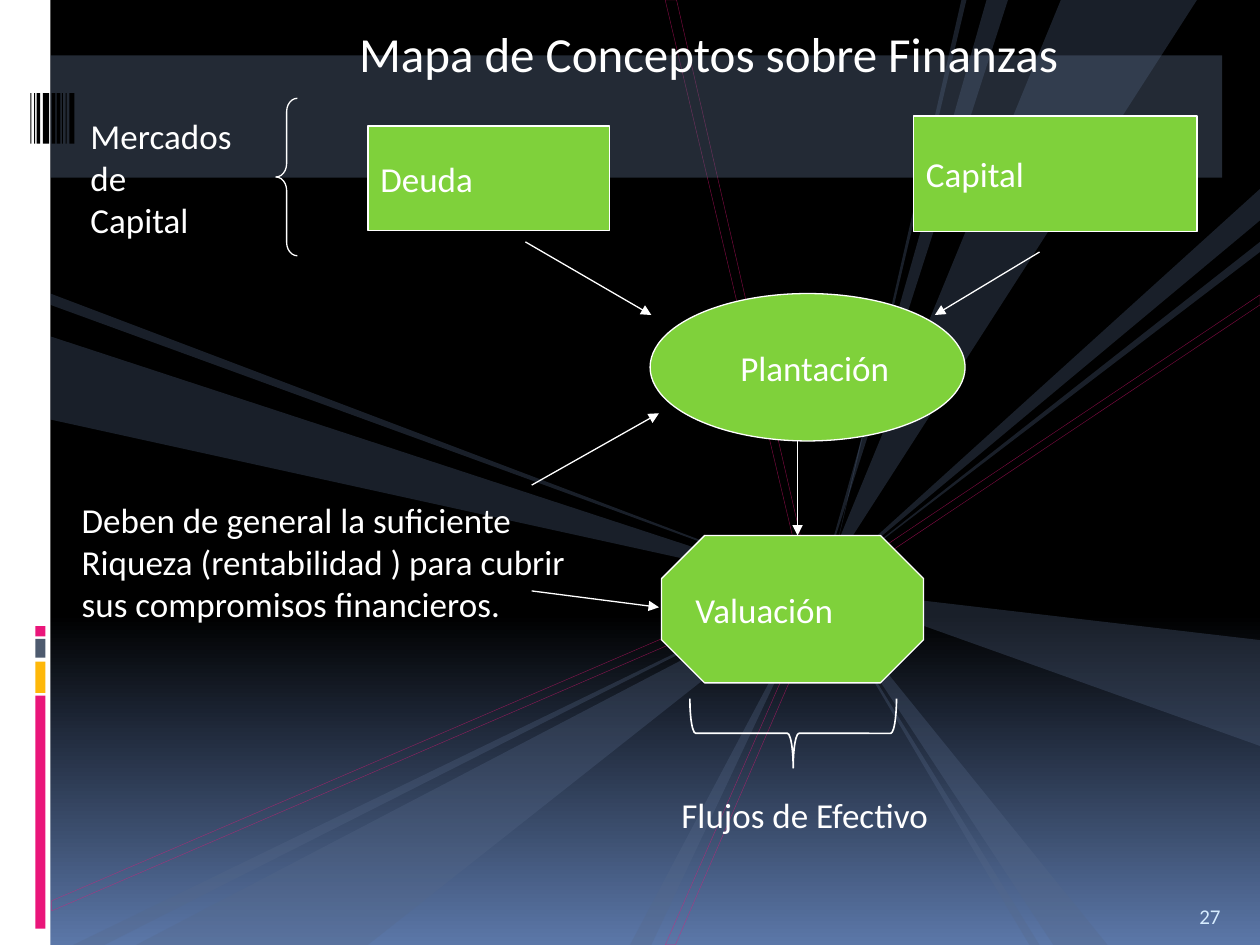
from lxml import etree
from pptx import Presentation
from pptx.dml.color import RGBColor
from pptx.enum.shapes import MSO_CONNECTOR, MSO_SHAPE
from pptx.enum.text import MSO_ANCHOR, PP_ALIGN
from pptx.oxml.ns import qn
from pptx.util import Inches, Pt

RECT, OVAL, OCTAGON = MSO_SHAPE.RECTANGLE, MSO_SHAPE.OVAL, MSO_SHAPE.OCTAGON
LEFT_BRACE, RIGHT_BRACE = MSO_SHAPE.LEFT_BRACE, MSO_SHAPE.RIGHT_BRACE
STRAIGHT = MSO_CONNECTOR.STRAIGHT
LEFT, TOP, MIDDLE, BOTTOM = PP_ALIGN.LEFT, MSO_ANCHOR.TOP, MSO_ANCHOR.MIDDLE, MSO_ANCHOR.BOTTOM

WIDTH, HEIGHT = 10, 7.5
FONT = "Calibri"
WHITE, BLACK, GREEN, PINK = "FFFFFF", "000000", "7FD13B", "EA157A"
GOLD, SLATE, RAY, BAND, PALE = "FEB80A", "4E5B6F", "566989", "586A86", "D6ECFF"
HUB = (6.5, 4.67)  # point where the background rays meet

# Vertical side blocks: top, height, colour
SIDE_BLOCKS = [(5.52, 1.85, PINK), (5.25, 0.25, GOLD), (5.07, 0.15, SLATE), (4.97, 0.08, PINK)]
# Barcode: left, width
BARS = [(0.24, 0.01), (0.27, 0.01), (0.29, 0.03), (0.34, 0.05), (0.41, 0.03),
        (0.45, 0.03), (0.49, 0.01), (0.52, 0.01), (0.55, 0.04)]
# Each ray: two points on the edge of the slide and the tip
RAYS = [
    ((7.67, 0), (7.63, 0), (6.59, 4.55)),
    ((8.42, 0), (9.5, 0), HUB),
    ((10, 5.08), (10, 5.92), HUB),
    ((8, 0), (7.83, 0), HUB),
    ((8.36, HEIGHT), (8.79, HEIGHT), HUB),
    ((8.25, HEIGHT), (8.17, HEIGHT), HUB),
    ((10, 1.5), (10, 1.75), HUB),
    ((10, 1.92), (10, 2), HUB),
    ((1.08, HEIGHT), (2.92, HEIGHT), HUB),
    ((0.58, HEIGHT), (0.83, HEIGHT), (6.42, 4.67)),
    ((0.4, 2.67), (0.4, 3.33), HUB),
    ((0.4, 2.33), (0.4, 2.42), (6.57, 4.67)),
    ((5, HEIGHT), (5.17, HEIGHT), HUB),
]
# Thin pink outlines that bend near the hub
OUTLINES = [
    [(5.28, HEIGHT), (6.52, 4.67), (10, 2.34), (10, 2.42), (6.57, 4.71), (5.36, HEIGHT)],
    [(0.41, 7.15), (0.41, 7.23), (6.44, 4.63), (5.37, 0), (5.28, 0), (6.37, 4.59)],
]
# Concept nodes: shape, text, place, left margin
NODES = [
    (OVAL, "Plantación", (5.16, 2.33, 2.5, 1.17), 0.35),
    (RECT, "Deuda", (2.92, 1, 1.92, 0.83), 0.1),
    (RECT, "Capital", (7.25, 0.92, 2.25, 0.92), 0.1),
    (OCTAGON, "Valuación", (5.25, 4.25, 2.08, 1.17), 0.1),
]
ARROWS = [
    ((4.17, 1.92), (5.17, 2.5)),
    ((8.25, 2), (7.42, 2.5)),
    ((6.33, 3.5), (6.33, 4.25)),
    ((4.22, 3.85), (5.23, 3.28)),
    ((4.22, 4.69), (5.23, 4.82)),
]
LABELS = [
    ("Mercados\nde\nCapital", (0.62, 0.86, 1.34, 1.11)),
    ("Deben de general la suficiente\nRiqueza (rentabilidad ) para cubrir\n"
     "sus compromisos financieros.", (0.55, 3.91, 4.11, 1.11)),
    ("Flujos de Efectivo", (5.31, 6.25, 2.24, 0.44)),
]


def color(value):
    return RGBColor.from_string(value)


def inches(values):
    return [Inches(value) for value in values]


def set_opacity(fill_parent, percent):
    for node in fill_parent.iter(qn("a:srgbClr")):
        etree.SubElement(node, qn("a:alpha"), val=str(percent * 1000))


def style(shape, fill=None, line=None, weight=0.75, opacity=100):
    shape.shadow.inherit = False
    if fill:
        shape.fill.solid()
        shape.fill.fore_color.rgb = color(fill)
    else:
        shape.fill.background()
    if line:
        shape.line.color.rgb = color(line)
        shape.line.width = Pt(weight)
    else:
        shape.line.fill.background()
    if opacity < 100:
        set_opacity(shape.element.spPr, opacity)


def add_shape(page, kind, place, **look):
    shape = page.shapes.add_shape(kind, *inches(place))
    style(shape, **look)
    return shape


def add_polygon(page, points, **look):
    start, *rest = [inches(point) for point in points]
    builder = page.shapes.build_freeform(*start)
    builder.add_line_segments(rest, close=True)
    style(builder.convert_to_shape(), **look)


def write(shape, text, size=20, ink=WHITE, anchor=TOP, wrap=False):
    frame = shape.text_frame
    frame.text = text
    frame.word_wrap = wrap
    frame.vertical_anchor = anchor
    for para in frame.paragraphs:
        para.alignment = LEFT
        for span in para.runs:
            span.font.name = FONT
            span.font.size = Pt(size)
            span.font.color.rgb = color(ink)


def add_label(page, text, place, **look):
    write(page.shapes.add_textbox(*inches(place)), text, **look)


def add_arrow(page, start, end):
    arrow = page.shapes.add_connector(STRAIGHT, *inches(start + end))
    arrow.line.color.rgb = color(WHITE)
    arrow.line.width = Pt(0.75)
    etree.SubElement(arrow.line._get_or_add_ln(), qn("a:tailEnd"), type="triangle")
    etree.SubElement(arrow.element.spPr, qn("a:effectLst"))


def add_title(page, text, place):
    title = page.shapes.title
    title.left, title.top, title.width, title.height = inches(place)
    write(title, text, size=28)
    title.element.getparent().append(title.element)  # in front of the band


def draw_background(page):
    fill = page.background.fill
    fill.gradient()
    fill.gradient_angle = 270
    for stop, position, shade in zip(fill.gradient_stops, (0.65, 1), (BLACK, "5B77A8")):
        stop.position = position
        stop.color.rgb = color(shade)


def draw_decoration(page):
    # White margin with its coloured blocks
    add_shape(page, RECT, (0, 0, 0.4, HEIGHT), fill=WHITE)
    for top, height, shade in SIDE_BLOCKS:
        add_shape(page, RECT, (0.28, top, 0.08, height), fill=shade)
    # Rays, then the band over them
    for points in OUTLINES:
        add_polygon(page, points, line=PINK, weight=0.25, opacity=53)
    for points in RAYS:
        add_polygon(page, points, fill=RAY, opacity=30)
    add_shape(page, RECT, (0.4, 0.44, 9.3, 0.97), fill=BAND, opacity=40)
    # Barcode
    for left, width in BARS:
        add_shape(page, RECT, (left, 0.74, width, 0.4), fill=BLACK)


def draw_map(page):
    for kind, text, place, margin in NODES:
        node = add_shape(page, kind, place, fill=GREEN, line=WHITE)
        write(node, text, anchor=MIDDLE)
        node.text_frame.margin_left = Inches(margin)
        if kind == OCTAGON:
            node.adjustments[0] = 0.293
    for start, end in ARROWS:
        add_arrow(page, start, end)
    # Braces beside the markets and below the valuation
    brace = add_shape(page, LEFT_BRACE, (2.19, 0.78, 0.17, 1.25), line=WHITE)
    brace.adjustments[0] = 0.625
    brace = add_shape(page, RIGHT_BRACE, (6.02, 5, 0.55, 1.64), line=WHITE, weight=0.94)
    brace.rotation = 90
    for text, place in LABELS:
        add_label(page, text, place)


def main():
    deck = Presentation()
    deck.slide_width, deck.slide_height = inches((WIDTH, HEIGHT))
    page = deck.slides.add_slide(deck.slide_layouts[5])
    draw_background(page)
    draw_decoration(page)
    add_label(page, "27", (9.42, 7.02, 0.5, 0.4), size=12, ink=PALE, anchor=BOTTOM, wrap=True)
    draw_map(page)
    add_title(page, "Mapa de Conceptos sobre Finanzas", (2.75, 0.14, 5.88, 0.57))
    deck.save("out.pptx")


if __name__ == "__main__":
    main()
